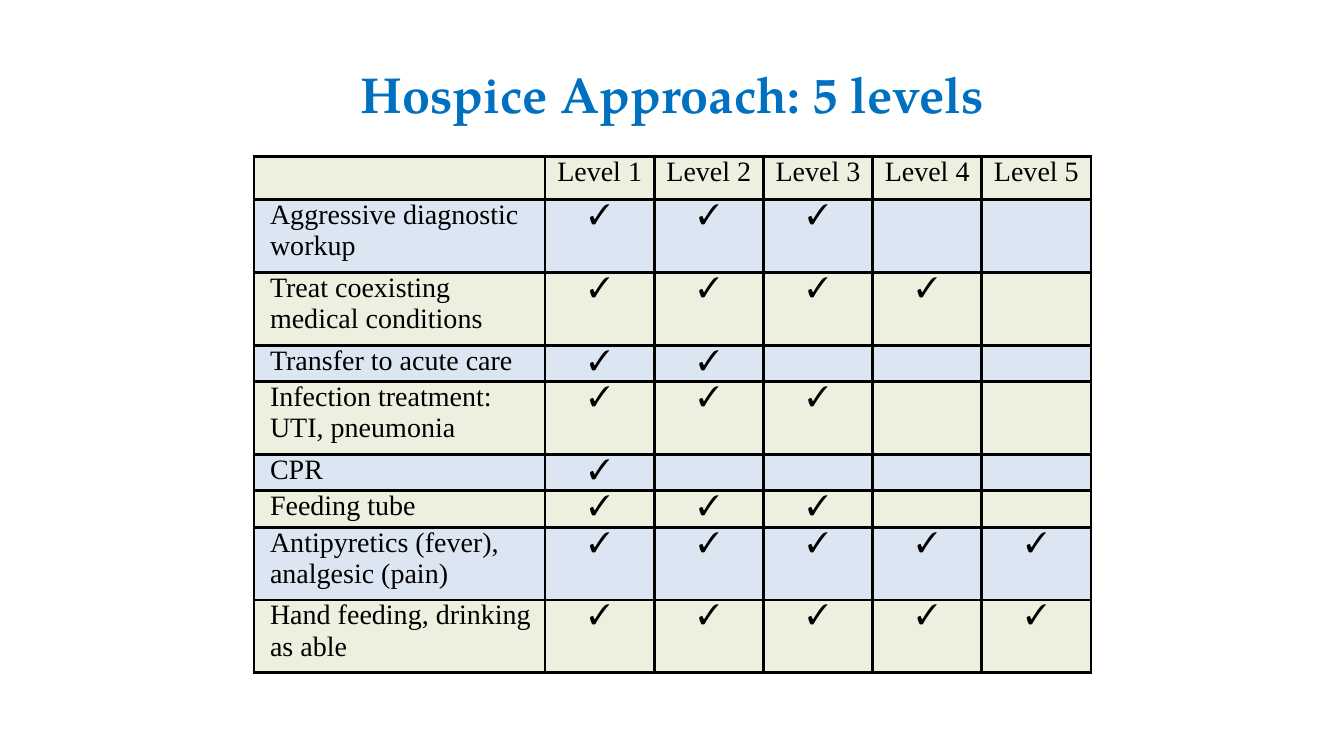
from dataclasses import dataclass

from lxml.etree import SubElement
from pptx import Presentation
from pptx.dml.color import RGBColor
from pptx.enum.text import MSO_ANCHOR, PP_ALIGN
from pptx.oxml.ns import qn
from pptx.table import _Cell
from pptx.text.text import _Paragraph
from pptx.util import Pt

BLUE = RGBColor(0x00, 0x70, 0xC0)
BLACK = RGBColor(0x00, 0x00, 0x00)
GREEN = RGBColor(0xEB, 0xF1, 0xDE)
PALE = RGBColor(0xDC, 0xE6, 0xF2)

TITLE = {"name": "TeX Gyre Pagella", "size": Pt(36), "bold": True}
PLAIN = {"name": "Times New Roman", "size": Pt(20), "bold": False}
CHECK = {**PLAIN, "bold": True}
INSET = {"margin_left": Pt(4.3), "margin_right": Pt(4.3),
         "margin_top": 0, "margin_bottom": 0}

LEVELS = 5
HEAD, TALL, SHORT = 31, 52, 26
FIRST, OTHER = 208, 78


@dataclass
class Care:
    label: str
    checks: int  # levels that include this care, from level 1 up
    height: int = TALL


CARES = [
    Care("Aggressive diagnostic workup", 3),
    Care("Treat coexisting medical conditions", 4),
    Care("Transfer to acute care", 2, SHORT),
    Care("Infection treatment: UTI, pneumonia", 3),
    Care("CPR", 1, SHORT),
    Care("Feeding tube", 3, SHORT),
    Care("Antipyretics (fever), analgesic (pain)", 5),
    Care("Hand feeding, drinking as able", 5),
]


def apply(target: object, values: dict) -> None:
    for key, value in values.items():
        setattr(target, key, value)


def write(para: _Paragraph, text: str, style: dict, color: RGBColor) -> None:
    run = para.add_run()
    run.text = text
    apply(run.font, style)
    run.font.color.rgb = color


def border(cell: _Cell) -> None:
    props = cell._tc.get_or_add_tcPr()
    for side in ("lnL", "lnR", "lnT", "lnB"):
        line = SubElement(props, qn(f"a:{side}"), w=str(int(Pt(2.25))))
        fill = SubElement(line, qn("a:solidFill"))
        SubElement(fill, qn("a:srgbClr"), val=str(BLACK))


def draw_cell(cell: _Cell, text: str, style: dict, fill: RGBColor,
              label: bool) -> None:
    border(cell)
    cell.fill.solid()
    cell.fill.fore_color.rgb = fill
    apply(cell, INSET)
    para = cell.text_frame.paragraphs[0]
    if label:
        para._p.get_or_add_pPr().set("marL", str(int(Pt(7.2))))
    else:
        para.alignment = PP_ALIGN.CENTER
    if text:
        write(para, text, style, BLACK)


def main() -> None:
    deck = Presentation()
    apply(deck, {"slide_width": Pt(960), "slide_height": Pt(540)})
    slide = deck.slides.add_slide(deck.slide_layouts[5])

    # Title
    title = slide.shapes.title
    apply(title, {"left": Pt(48), "top": Pt(21.6),
                  "width": Pt(864), "height": Pt(90)})
    title.text_frame.vertical_anchor = MSO_ANCHOR.MIDDLE
    para = title.text_frame.paragraphs[0]
    para.alignment = PP_ALIGN.CENTER
    write(para, "Hospice Approach: 5 levels", TITLE, BLUE)

    # Table grid
    widths = [FIRST] + [OTHER] * LEVELS
    heights = [HEAD] + [care.height for care in CARES]
    frame = slide.shapes.add_table(len(heights), len(widths), Pt(181.4),
                                   Pt(111.6), Pt(sum(widths)),
                                   Pt(sum(heights)))
    table = frame.table
    apply(table, {"first_row": False, "horz_banding": False})
    for col, width in zip(table.columns, widths):
        col.width = Pt(width)
    for row, height in zip(table.rows, heights):
        row.height = Pt(height)

    # Header and care rows
    heads = [""] + [f"Level {n}" for n in range(1, LEVELS + 1)]
    rows = [heads] + [
        [care.label] + ["✓"] * care.checks + [""] * (LEVELS - care.checks)
        for care in CARES]
    for r, texts in enumerate(rows):
        fill = PALE if r % 2 else GREEN
        for c, text in enumerate(texts):
            style = CHECK if r and c else PLAIN
            draw_cell(table.cell(r, c), text, style, fill, c == 0)

    deck.save("out.pptx")


if __name__ == "__main__":
    main()
